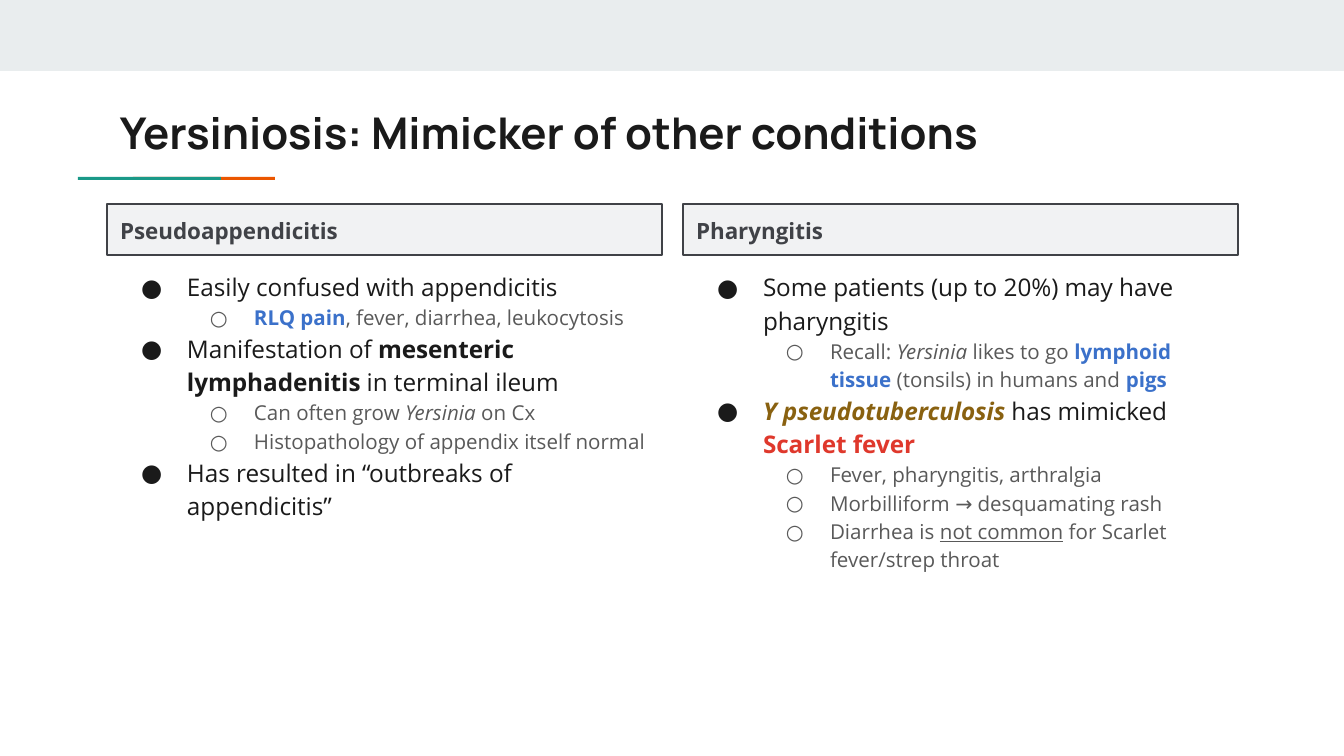
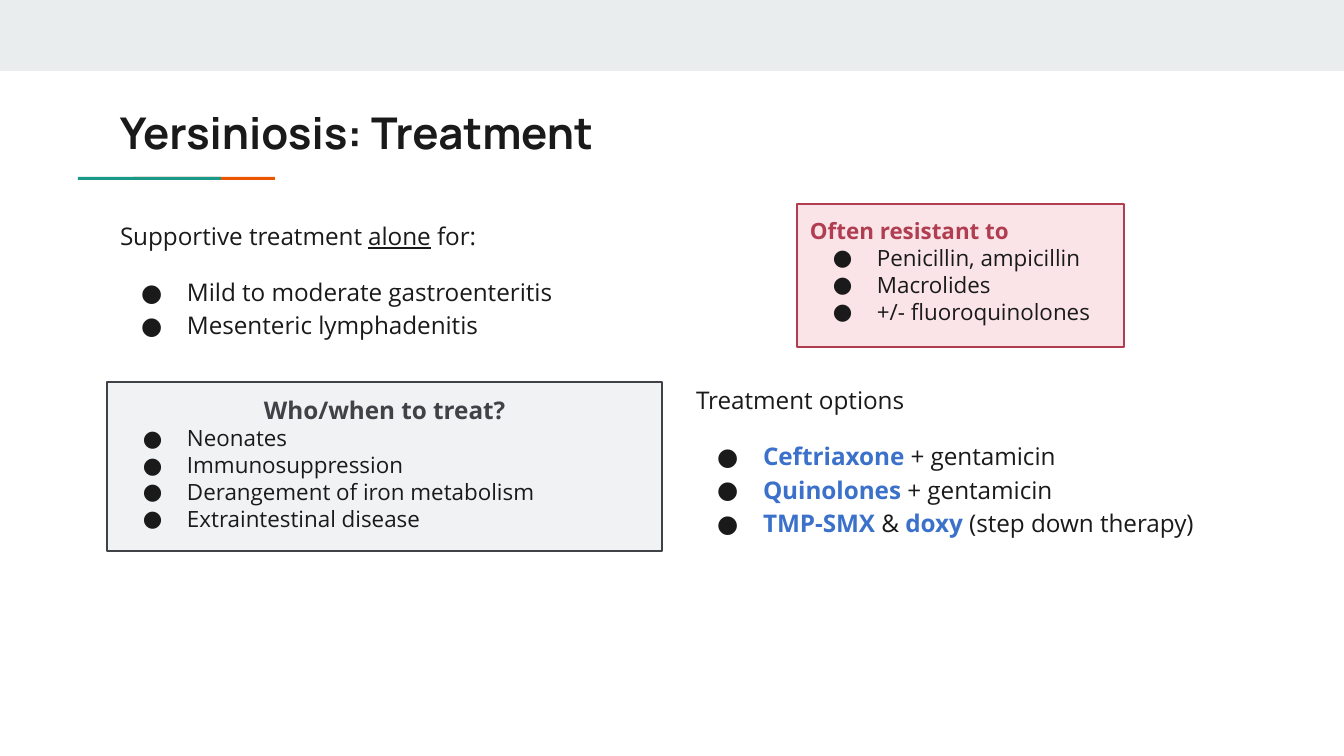
from dataclasses import dataclass

from lxml import etree
from pptx import Presentation
from pptx.dml.color import RGBColor
from pptx.enum.shapes import MSO_SHAPE
from pptx.enum.text import MSO_ANCHOR, PP_ALIGN
from pptx.oxml.ns import qn
from pptx.util import Emu, Pt

RECTANGLE = MSO_SHAPE.RECTANGLE
TOP = MSO_ANCHOR.TOP
LEFT, CENTER = PP_ALIGN.LEFT, PP_ALIGN.CENTER

# Layout, in px
EMU_PER_PX = 914400 / 134.4
SLIDE_WIDTH, SLIDE_HEIGHT = 1344, 756
INSET = 13
COLUMN_WIDTH = 555
LEFT_COLUMN, RIGHT_COLUMN = 107, 683
CONTENT_TOP = 204
HEADER_HEIGHT = 51

COLOURS = {
    "band": "E9EDEE",
    "orange": "EB5600",
    "teal": "1A9988",
    "ink": "1A1A1A",
    "grey": "595959",
    "slate": "404247",
    "panel": "F1F2F3",
    "blue": "3B71CA",
    "ochre": "896110",
    "red": "DF382C",
    "crimson": "B03D50",
    "blush": "FAE4E8",
}


@dataclass
class TextStyle:
    size: float
    colour: str = "ink"
    font: str = "Open Sans"
    bold: bool = False
    align: int = LEFT
    line_spacing: float = 1
    space_before: int = 0
    level: int = 0
    bullet: str = ""
    indent: int = 0
    hanging: int = 0


TEXT_STYLES = {
    "title": TextStyle(23.4, font="Manrope", bold=True),
    "lead": TextStyle(13, line_spacing=1.15),
    "point": TextStyle(13, line_spacing=1.15, bullet="●", indent=67, hanging=46),
    "first point": TextStyle(13, line_spacing=1.15, space_before=12,
                             bullet="●", indent=67, hanging=46),
    "detail": TextStyle(11, "grey", line_spacing=1.15, level=1,
                        bullet="○", indent=134, hanging=44),
    "header": TextStyle(12, "slate", bold=True),
    "question": TextStyle(13, "slate", bold=True, align=CENTER),
    "warning": TextStyle(12, "crimson", bold=True),
    "item": TextStyle(12, bullet="●", indent=67, hanging=44),
}

# Emphasis within a paragraph: font attributes, and a colour where it changes
EMPHASIS = {
    "bold": {"bold": True},
    "italic": {"italic": True},
    "underline": {"underline": True},
    "key": {"bold": True, "colour": "blue"},
    "species": {"bold": True, "italic": True, "colour": "ochre"},
    "alert": {"bold": True, "colour": "red"},
}


def px(length):
    return Emu(round(length * EMU_PER_PX))


def rgb(name):
    return RGBColor.from_string(COLOURS[name])


def add_bullet(paragraph, style):
    properties = paragraph._p.get_or_add_pPr()
    properties.set("marL", str(px(style.indent)))
    properties.set("indent", str(-px(style.hanging)))
    colour = etree.SubElement(properties, qn("a:buClr"))
    etree.SubElement(colour, qn("a:srgbClr"), val=COLOURS[style.colour])
    etree.SubElement(properties, qn("a:buFont"), typeface=style.font)
    etree.SubElement(properties, qn("a:buChar"), char=style.bullet)


def add_runs(paragraph, parts):
    """Each part is plain text or a (text, emphasis) pair."""
    for part in parts:
        text, emphasis = (part, None) if isinstance(part, str) else part
        run = paragraph.add_run()
        run.text = text
        for attribute, value in EMPHASIS.get(emphasis, {}).items():
            if attribute == "colour":
                run.font.color.rgb = rgb(value)
            else:
                setattr(run.font, attribute, value)


def fill_text(shape, lines):
    """Each line is a style name followed by the parts of its text."""
    frame = shape.text_frame
    frame.word_wrap = True
    frame.vertical_anchor = TOP
    frame.margin_left = frame.margin_right = px(INSET)
    frame.margin_top = frame.margin_bottom = px(INSET)
    for index, (style_name, *parts) in enumerate(lines):
        style = TEXT_STYLES[style_name]
        paragraph = frame.add_paragraph() if index else frame.paragraphs[0]
        if style.bullet:
            add_bullet(paragraph, style)
        paragraph.level = style.level
        paragraph.alignment = style.align
        paragraph.line_spacing = style.line_spacing
        paragraph.space_before = Pt(style.space_before)
        paragraph.font.name = style.font
        paragraph.font.size = Pt(style.size)
        paragraph.font.bold = style.bold
        paragraph.font.color.rgb = rgb(style.colour)
        add_runs(paragraph, parts)


def add_text(slide, left, top, width, height, lines):
    box = slide.shapes.add_textbox(px(left), px(top), px(width), px(height))
    fill_text(box, lines)


def add_box(slide, left, top, width, height, fill, line=None, lines=()):
    shape = slide.shapes.add_shape(RECTANGLE, px(left), px(top), px(width), px(height))
    shape.shadow.inherit = False
    shape.fill.solid()
    shape.fill.fore_color.rgb = rgb(fill)
    if line:
        shape.line.color.rgb = rgb(line)
        shape.line.width = Pt(0.75)
    else:
        shape.line.fill.background()
    if lines:
        fill_text(shape, lines)


def add_titled_slide(presentation, title):
    slide = presentation.slides.add_slide(presentation.slide_layouts[6])
    add_box(slide, 0, 0, SLIDE_WIDTH, 71, "band")
    # The teal half of the rule overlaps the orange half
    add_box(slide, 133, 177, 142, 3, "orange")
    add_box(slide, 78, 177, 143, 3, "teal")
    add_text(slide, LEFT_COLUMN, 93, 1130, 79, [("title", title)])
    return slide


def add_headed_column(slide, left, header, height, lines):
    add_text(slide, left, CONTENT_TOP + HEADER_HEIGHT, COLUMN_WIDTH, height, lines)
    add_box(slide, left, CONTENT_TOP, COLUMN_WIDTH, HEADER_HEIGHT,
            "panel", "slate", [("header", header)])


def build_mimicker_slide(presentation):
    slide = add_titled_slide(presentation, "Yersiniosis: Mimicker of other conditions")
    add_headed_column(slide, LEFT_COLUMN, "Pseudoappendicitis", 281, [
        ("point", "Easily confused with appendicitis"),
        ("detail", ("RLQ pain", "key"), ", fever, diarrhea, leukocytosis"),
        ("point", "Manifestation of ", ("mesenteric lymphadenitis", "bold"),
         " in terminal ileum"),
        ("detail", "Can often grow ", ("Yersinia ", "italic"), "on Cx"),
        ("detail", "Histopathology of appendix itself normal"),
        ("point", "Has resulted in “outbreaks of appendicitis”"),
    ])
    add_headed_column(slide, RIGHT_COLUMN, "Pharyngitis", 355, [
        ("point", "Some patients (up to 20%) may have pharyngitis"),
        ("detail", "Recall: ", ("Yersinia", "italic"), " likes to go ",
         ("lymphoid tissue", "key"), " (tonsils) in humans and ", ("pigs", "key")),
        ("point", ("Y pseudotuberculosis ", "species"), "has mimicked ",
         ("Scarlet fever", "alert")),
        ("detail", "Fever, pharyngitis, arthralgia"),
        ("detail", "Morbilliform → desquamating rash"),
        ("detail", "Diarrhea is ", ("not common", "underline"),
         " for Scarlet fever/strep throat"),
    ])


def build_treatment_slide(presentation):
    slide = add_titled_slide(presentation, "Yersiniosis: Treatment")
    # Supportive care and drug options
    add_text(slide, LEFT_COLUMN, CONTENT_TOP, COLUMN_WIDTH, 332, [
        ("lead", "Supportive treatment ", ("alone", "underline"), " for:"),
        ("first point", "Mild to moderate gastroenteritis"),
        ("point", "Mesenteric lymphadenitis"),
    ])
    add_text(slide, RIGHT_COLUMN, 368, COLUMN_WIDTH, 199, [
        ("lead", "Treatment options"),
        ("first point", ("Ceftriaxone ", "key"), "+ gentamicin"),
        ("point", ("Quinolones ", "key"), "+ gentamicin"),
        ("point", ("TMP-SMX ", "key"), "& ", ("doxy ", "key"), "(step down therapy)"),
    ])
    # Resistance and indications
    add_box(slide, 797, CONTENT_TOP, 327, 143, "blush", "crimson", [
        ("warning", "Often resistant to"),
        ("item", "Penicillin, ampicillin"),
        ("item", "Macrolides"),
        ("item", "+/- fluoroquinolones"),
    ])
    add_box(slide, LEFT_COLUMN, 382, COLUMN_WIDTH, 169, "panel", "slate", [
        ("question", "Who/when to treat?"),
        ("item", "Neonates"),
        ("item", "Immunosuppression"),
        ("item", "Derangement of iron metabolism"),
        ("item", "Extraintestinal disease"),
    ])


def main():
    presentation = Presentation()
    presentation.slide_width = px(SLIDE_WIDTH)
    presentation.slide_height = px(SLIDE_HEIGHT)
    build_mimicker_slide(presentation)
    build_treatment_slide(presentation)
    presentation.save("out.pptx")


if __name__ == "__main__":
    main()
